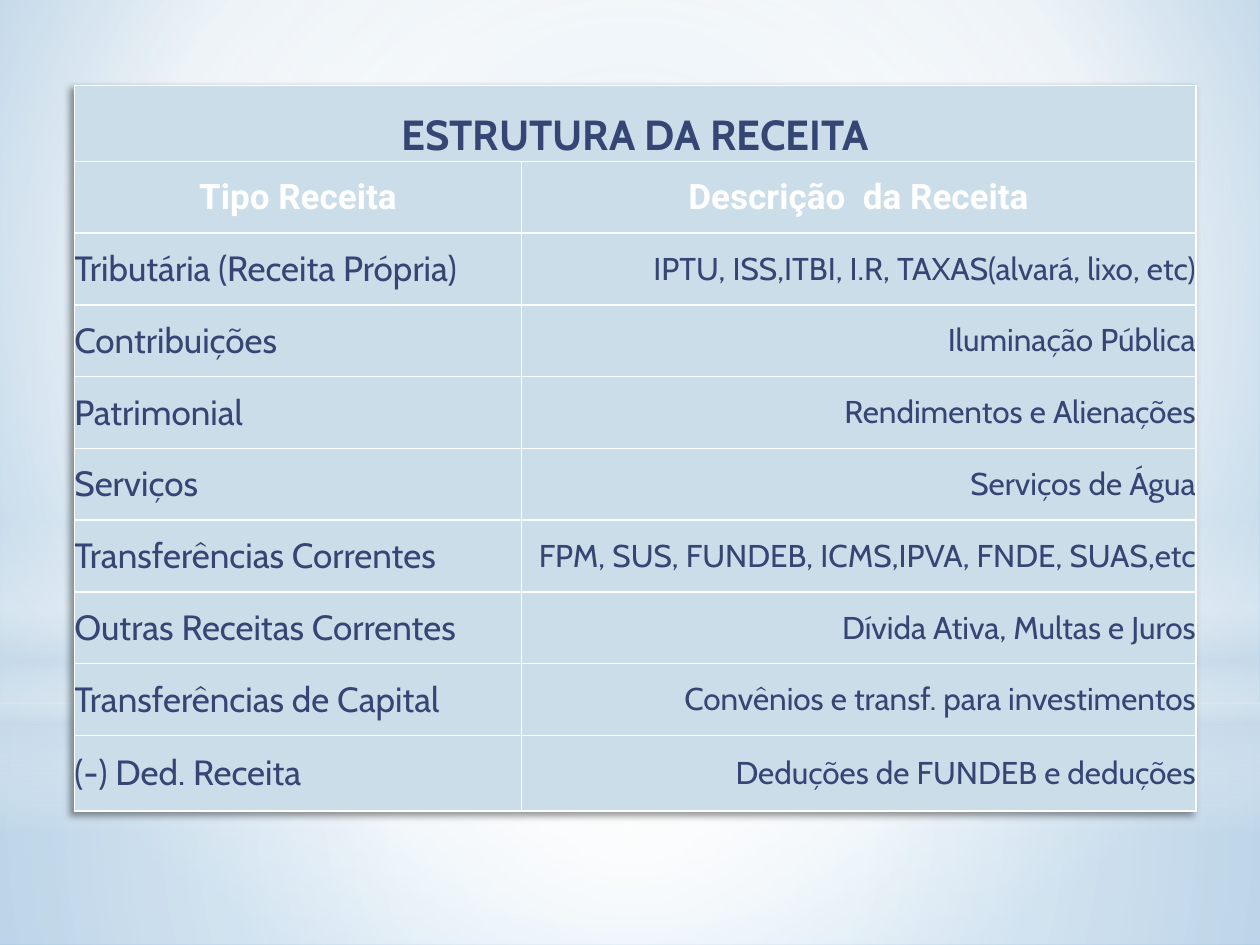
from dataclasses import dataclass

from lxml import etree
from pptx import Presentation
from pptx.dml.color import RGBColor
from pptx.enum.shapes import MSO_SHAPE
from pptx.enum.text import MSO_ANCHOR, PP_ALIGN
from pptx.oxml import parse_xml
from pptx.oxml.ns import nsdecls, qn
from pptx.util import Inches, Pt

RECTANGLE, ELLIPSE = MSO_SHAPE.RECTANGLE, MSO_SHAPE.OVAL
MIDDLE, BOTTOM = MSO_ANCHOR.MIDDLE, MSO_ANCHOR.BOTTOM
LEFT, CENTER, RIGHT = PP_ALIGN.LEFT, PP_ALIGN.CENTER, PP_ALIGN.RIGHT


@dataclass(frozen=True)
class Theme:
    navy: str = "354675"
    white: str = "FFFFFF"
    mist: str = "CCDDEA"
    sky: str = "BCD5E8"
    blue: str = "82B6DE"
    body_font: str = "Cabin"
    header_font: str = "Roboto"
    title_size: int = 24
    label_size: int = 20
    detail_size: int = 18
    border_width: int = 1


THEME = Theme()
CENTERED = (50, 50, 50, 50)

BACKGROUND_STOPS = [(0, THEME.sky, 100), (60, THEME.white, 100), (100, THEME.blue, 100)]
GLOWS = [
    (RECTANGLE, (0, 5.58, 10, 1.92), CENTERED,
     [(0, THEME.white, 91), (37, THEME.white, 76), (100, THEME.mist, 79)]),
    (RECTANGLE, (0, 0, 10, 5.58), CENTERED,
     [(0, THEME.white, 89), (48, THEME.white, 62), (100, THEME.mist, 79)]),
    (RECTANGLE, (0, 4.12, 10, 2.5), None,
     [(0, THEME.white, 0), (29, THEME.white, 30), (45, THEME.mist, 40),
      (55, THEME.white, 26), (65, THEME.mist, 60), (100, THEME.white, 0)]),
    (ELLIPSE, (0, 1.75, 10, 5.58), CENTERED,
     [(0, THEME.white, 100), (56, THEME.white, 0)]),
]

TITLE = "ESTRUTURA DA RECEITA"
HEADERS = ("Tipo Receita", "Descrição  da Receita")
REVENUES = [
    ("Tributária (Receita Própria)", "IPTU, ISS,ITBI, I.R, TAXAS(alvará, lixo, etc)"),
    ("Contribuições", "Iluminação Pública"),
    ("Patrimonial", "Rendimentos e Alienações"),
    ("Serviços", "Serviços de Água"),
    ("Transferências Correntes", "FPM, SUS, FUNDEB, ICMS,IPVA, FNDE, SUAS,etc"),
    ("Outras Receitas Correntes", "Dívida Ativa, Multas e Juros"),
    ("Transferências de Capital", "Convênios e transf. para investimentos"),
    ("(-) Ded. Receita", "Deduções de FUNDEB e deduções"),
]
COLUMN_WIDTHS = (3.55, 5.35)
END_ROW_HEIGHT, INNER_ROW_HEIGHT = 0.6, 0.57


def apply_gradient(owner, fill, stops, focus=None):
    fill.solid()
    solid = next(owner.iter(qn("a:solidFill")))
    gradient = parse_xml(f'<a:gradFill rotWithShape="1" {nsdecls("a")}><a:gsLst/></a:gradFill>')
    for position, color, opacity in stops:
        stop = etree.SubElement(gradient[0], qn("a:gs"), pos=str(position * 1000))
        tint = etree.SubElement(stop, qn("a:srgbClr"), val=color)
        if opacity < 100:
            etree.SubElement(tint, qn("a:alpha"), val=str(opacity * 1000))
    if focus:
        radial = etree.SubElement(gradient, qn("a:path"), {"path": "circle"})
        edges = {side: str(inset * 1000) for side, inset in zip("ltrb", focus)}
        etree.SubElement(radial, qn("a:fillToRect"), edges)
    else:
        etree.SubElement(gradient, qn("a:lin"), ang=str(90 * 60000), scaled="0")
    solid.getparent().replace(solid, gradient)


def add_glow(slide, outline, box, focus, stops):
    glow = slide.shapes.add_shape(outline, *map(Inches, box))
    glow.shadow.inherit = False
    glow.line.fill.background()
    apply_gradient(glow.element, glow.fill, stops, focus)


def add_borders(cell):
    properties = cell._tc.get_or_add_tcPr()
    for index, side in enumerate("LRTB"):
        properties.insert(index, parse_xml(
            f'<a:ln{side} w="{Pt(THEME.border_width)}" {nsdecls("a")}><a:solidFill>'
            f'<a:srgbClr val="{THEME.white}"/></a:solidFill></a:ln{side}>'))


def style_cell(cell):
    cell.margin_left = cell.margin_right = cell.margin_top = cell.margin_bottom = 0
    cell.vertical_anchor = MIDDLE
    cell.fill.solid()
    cell.fill.fore_color.rgb = RGBColor.from_string(THEME.mist)
    add_borders(cell)


def write_cell(cell, text, size, align, font=THEME.body_font, color=THEME.navy, bold=False):
    paragraph = cell.text_frame.paragraphs[0]
    paragraph.alignment = align
    run = paragraph.add_run()
    run.text = text
    run.font.size = Pt(size)
    run.font.name = font
    run.font.bold = bold
    run.font.color.rgb = RGBColor.from_string(color)


def add_table_shadow(table):
    table._tbl.tblPr.insert(0, parse_xml(
        f'<a:effectLst {nsdecls("a")}><a:outerShdw blurRad="50800" dist="38100" '
        'dir="8100000" algn="tr" rotWithShape="0"><a:srgbClr val="000000">'
        '<a:alpha val="40000"/></a:srgbClr></a:outerShdw></a:effectLst>'))


def add_revenue_table(slide):
    row_count = len(REVENUES) + 2
    heights = [END_ROW_HEIGHT] + [INNER_ROW_HEIGHT] * (row_count - 2) + [END_ROW_HEIGHT]
    table = slide.shapes.add_table(
        row_count, len(COLUMN_WIDTHS), Inches(0.59), Inches(0.68),
        Inches(sum(COLUMN_WIDTHS)), Inches(sum(heights))).table
    table.first_row = table.horz_banding = False
    add_table_shadow(table)
    for column, width in zip(table.columns, COLUMN_WIDTHS):
        column.width = Inches(width)
    for row, height in zip(table.rows, heights):
        row.height = Inches(height)
        for cell in row.cells:
            style_cell(cell)

    title_cell = table.cell(0, 0)
    title_cell.merge(table.cell(0, 1))
    title_cell.vertical_anchor = BOTTOM
    write_cell(title_cell, TITLE, THEME.title_size, CENTER, bold=True)
    for column, header in enumerate(HEADERS):
        write_cell(table.cell(1, column), header, THEME.label_size, CENTER,
                   THEME.header_font, THEME.white, True)
    for row, (kind, description) in enumerate(REVENUES, start=2):
        write_cell(table.cell(row, 0), kind, THEME.label_size, LEFT)
        write_cell(table.cell(row, 1), description, THEME.detail_size, RIGHT)


def main():
    presentation = Presentation()
    presentation.slide_width, presentation.slide_height = Inches(10), Inches(7.5)
    slide = presentation.slides.add_slide(presentation.slide_layouts[6])
    apply_gradient(slide.element, slide.background.fill, BACKGROUND_STOPS, (20, 10, 20, 60))
    for outline, box, focus, stops in GLOWS:
        add_glow(slide, outline, box, focus, stops)
    add_revenue_table(slide)
    presentation.save("out.pptx")


if __name__ == "__main__":
    main()
